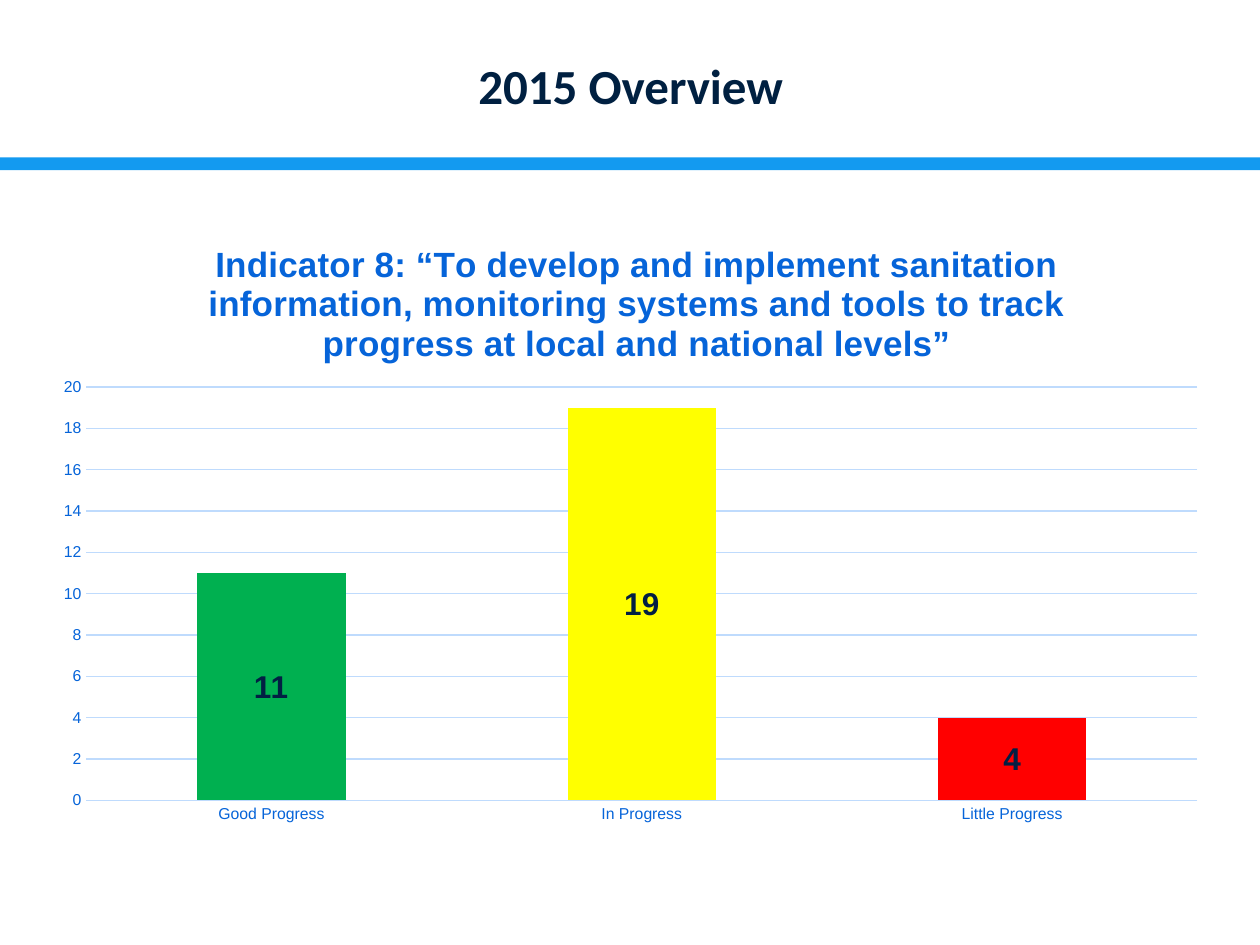
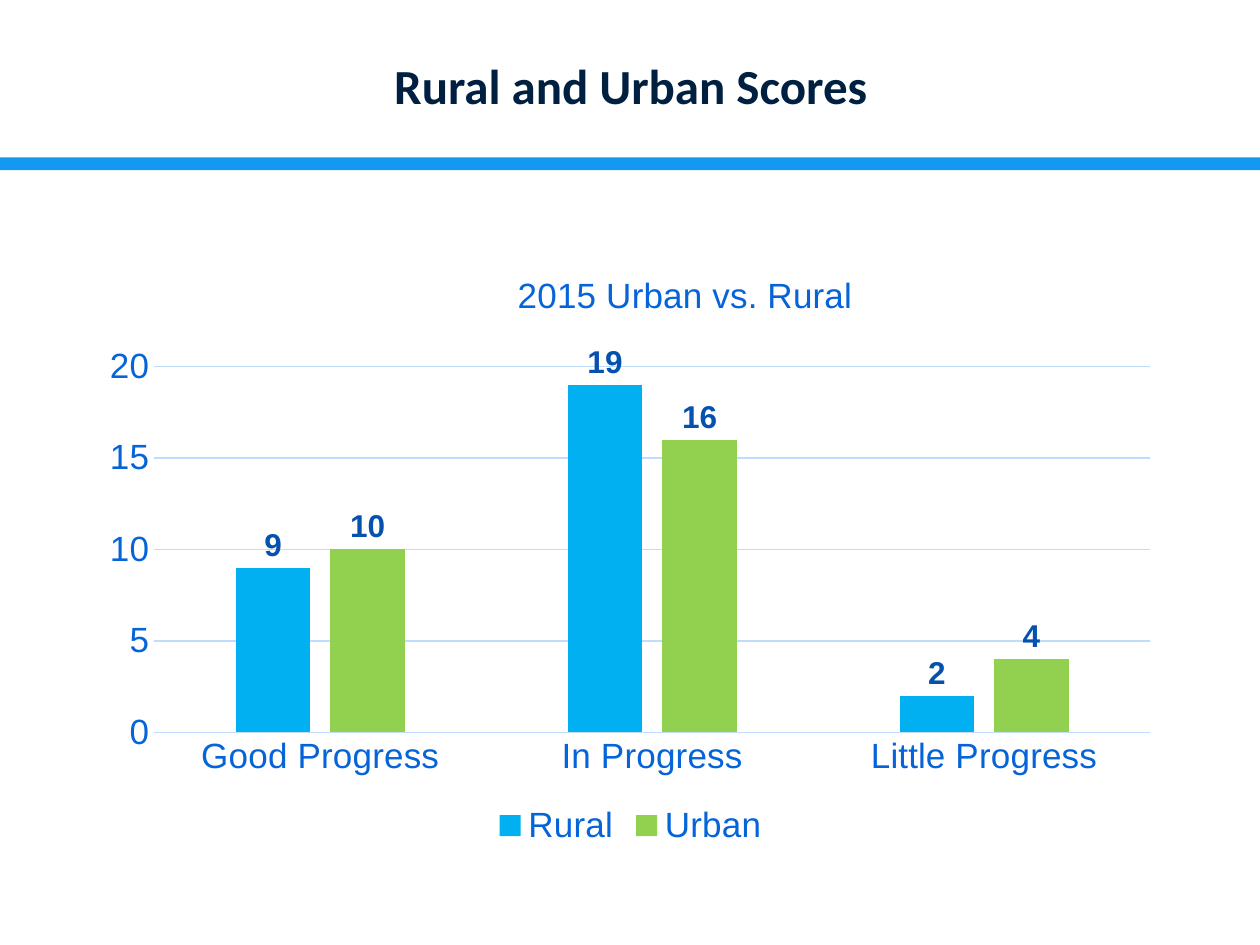
from dataclasses import dataclass

from lxml.etree import SubElement
from pptx import Presentation
from pptx.chart.data import CategoryChartData
from pptx.dml.color import RGBColor
from pptx.enum.chart import (XL_CHART_TYPE, XL_LABEL_POSITION,
                             XL_LEGEND_POSITION, XL_TICK_MARK)
from pptx.enum.shapes import MSO_SHAPE
from pptx.enum.text import MSO_ANCHOR, PP_ALIGN
from pptx.oxml.ns import qn
from pptx.util import Inches, Pt


@dataclass(frozen=True)
class Theme:
    """Colours, fonts and type sizes of the deck."""
    heading_font: str = "Calibri"
    chart_font: str = "Arial"
    heading: str = "002041"
    band: str = "139AF0"
    chart_text: str = "0664D9"
    chart_base: str = "021F43"
    score: str = "0551AE"
    grid: str = "BFDBFD"
    good: str = "00B050"
    in_progress: str = "FFFF00"
    little: str = "FF0000"
    rural: str = "00B0F0"
    urban: str = "92D050"
    heading_size: int = 28
    chart_title_size: int = 20
    label_size: int = 18
    base_size: int = 10
    small_axis: int = 9
    large_axis: int = 20


THEME = Theme()
PROGRESS = ("Good Progress", "In Progress", "Little Progress")


def style_font(font, size, color, face, bold=False):
    font.size, font.name, font.bold = Pt(size), face, bold
    font.color.rgb = RGBColor.from_string(color)


def paint(fill, color):
    fill.solid()
    fill.fore_color.rgb = RGBColor.from_string(color)


def place(parent, index, **shares):
    """Fix a chart part's place, in shares of the chart's size."""
    layout = parent.find(qn("c:layout"))
    if layout is not None:
        parent.remove(layout)
    layout = parent.makeelement(qn("c:layout"), {})
    parent.insert(index, layout)
    manual = SubElement(layout, qn("c:manualLayout"))
    if "w" in shares:
        SubElement(manual, qn("c:layoutTarget")).set("val", "inner")
    for side in ("xMode", "yMode"):
        SubElement(manual, qn(f"c:{side}")).set("val", "edge")
    for side, share in shares.items():
        SubElement(manual, qn(f"c:{side}")).set("val", str(share))


class Deck:
    def __init__(self, theme):
        self.theme = theme
        self.presentation = Presentation()
        self.presentation.slide_width = Inches(10)
        self.presentation.slide_height = Inches(7.5)
        self.slide = None

    def box(self, left, top, width, height):
        """Turn shares of the slide's size into lengths."""
        across = self.presentation.slide_width
        down = self.presentation.slide_height
        return (round(left * across), round(top * down),
                round(width * across), round(height * down))

    def start_slide(self, heading):
        self.slide = self.presentation.slides.add_slide(
            self.presentation.slide_layouts[5])
        self.band()
        self.heading(heading)

    def band(self):
        band = self.slide.shapes.add_shape(
            MSO_SHAPE.RECTANGLE, *self.box(0, 1 / 6, 1, 1 / 75))
        band.shadow.inherit = False
        paint(band.fill, self.theme.band)
        band.line.fill.background()

    def heading(self, words):
        title = self.slide.shapes.title
        title.left, title.top, title.width, title.height = self.box(
            0.106, 0.03, 0.789, 0.12)
        frame = title.text_frame
        frame.vertical_anchor = MSO_ANCHOR.MIDDLE
        paragraph = frame.paragraphs[0]
        paragraph.alignment = PP_ALIGN.CENTER
        run = paragraph.add_run()
        run.text = words
        style_font(run.font, self.theme.heading_size, self.theme.heading,
                   self.theme.heading_font, bold=True)

    def column_chart(self, area, scores, colors, plot_area, gap, overlap=0):
        data = CategoryChartData(number_format="0")
        data.categories = PROGRESS
        for name, values in scores.items():
            data.add_series(name, values)
        chart = self.slide.shapes.add_chart(
            XL_CHART_TYPE.COLUMN_CLUSTERED, *self.box(*area), data).chart
        style_font(chart.font, self.theme.base_size, self.theme.chart_base,
                   self.theme.chart_font)
        chart.has_legend = False
        columns = chart.plots[0]
        columns.vary_by_categories = False
        columns.gap_width, columns.overlap = gap, overlap
        for series, color in zip(columns.series, colors):
            series.invert_if_negative = False
            paint(series.format.fill, color)
        place(chart.element.find(f".//{qn('c:plotArea')}"), 0, **plot_area)
        return chart

    def chart_title(self, chart, words, x, y, bold=False):
        chart.has_title = True
        title = chart.chart_title
        run = title.text_frame.paragraphs[0].add_run()
        run.text = words
        style_font(run.font, self.theme.chart_title_size,
                   self.theme.chart_text, self.theme.chart_font, bold)
        title.include_in_layout = False
        place(title.format.element if hasattr(title.format, "element")
              else chart.element.find(f".//{qn('c:title')}"), 1, x=x, y=y)

    def axes(self, chart, size, step, baseline=False):
        for axis in (chart.category_axis, chart.value_axis):
            axis.major_tick_mark = axis.minor_tick_mark = XL_TICK_MARK.NONE
            axis.format.line.fill.background()
            style_font(axis.tick_labels.font, size, self.theme.chart_text,
                       self.theme.chart_font)
        scale = chart.value_axis
        scale.minimum_scale, scale.maximum_scale = 0, 20
        scale.major_unit = step
        scale.has_major_gridlines = True
        lines = [scale.major_gridlines.format.line]
        if baseline:
            lines.append(chart.category_axis.format.line)
        for line in lines:
            line.width = Pt(0.75)
            paint(line.fill, self.theme.grid)

    def score_labels(self, chart, color, position):
        for series in chart.plots[0].series:
            labels = series.data_labels
            labels.show_value = True
            labels.position = position
            style_font(labels.font, self.theme.label_size, color,
                       self.theme.chart_font, bold=True)

    def legend(self, chart):
        chart.has_legend = True
        chart.legend.position = XL_LEGEND_POSITION.BOTTOM
        chart.legend.include_in_layout = False
        style_font(chart.legend.font, self.theme.large_axis,
                   self.theme.chart_text, self.theme.chart_font)


def overview(deck):
    deck.start_slide("2015 Overview")
    indicator = deck.column_chart(
        (0.031, 0.219, 0.938, 0.667), {"Series 1": (11, 19, 4)},
        [THEME.good], dict(x=0.04, y=0.286, w=0.94, h=0.656), gap=150)
    deck.chart_title(
        indicator, "Indicator 8: “To develop and implement sanitation "
        "information, monitoring systems and tools to track progress "
        "at local and national levels”", x=0.138, y=0.045, bold=True)
    deck.axes(indicator, THEME.small_axis, step=2)
    deck.score_labels(indicator, THEME.chart_base, XL_LABEL_POSITION.CENTER)
    # One colour for each level of progress
    progress = indicator.plots[0].series[0]
    for level, color in enumerate((THEME.in_progress, THEME.little), 1):
        paint(progress.points[level].format.fill, color)


def rural_and_urban(deck):
    deck.start_slide("Rural and Urban Scores")
    comparison = deck.column_chart(
        (0.07, 0.271, 0.861, 0.631),
        {"Rural": (9, 19, 2), "Urban": (10, 16, 4)},
        [THEME.rural, THEME.urban],
        dict(x=0.061, y=0.185, w=0.918, h=0.614), gap=219, overlap=-27)
    deck.chart_title(comparison, "2015 Urban vs. Rural", x=0.39, y=0.017)
    deck.axes(comparison, THEME.large_axis, step=5, baseline=True)
    deck.score_labels(comparison, THEME.score, XL_LABEL_POSITION.OUTSIDE_END)
    deck.legend(comparison)


def main():
    deck = Deck(THEME)
    overview(deck)
    rural_and_urban(deck)
    deck.presentation.save("out.pptx")


if __name__ == "__main__":
    main()
